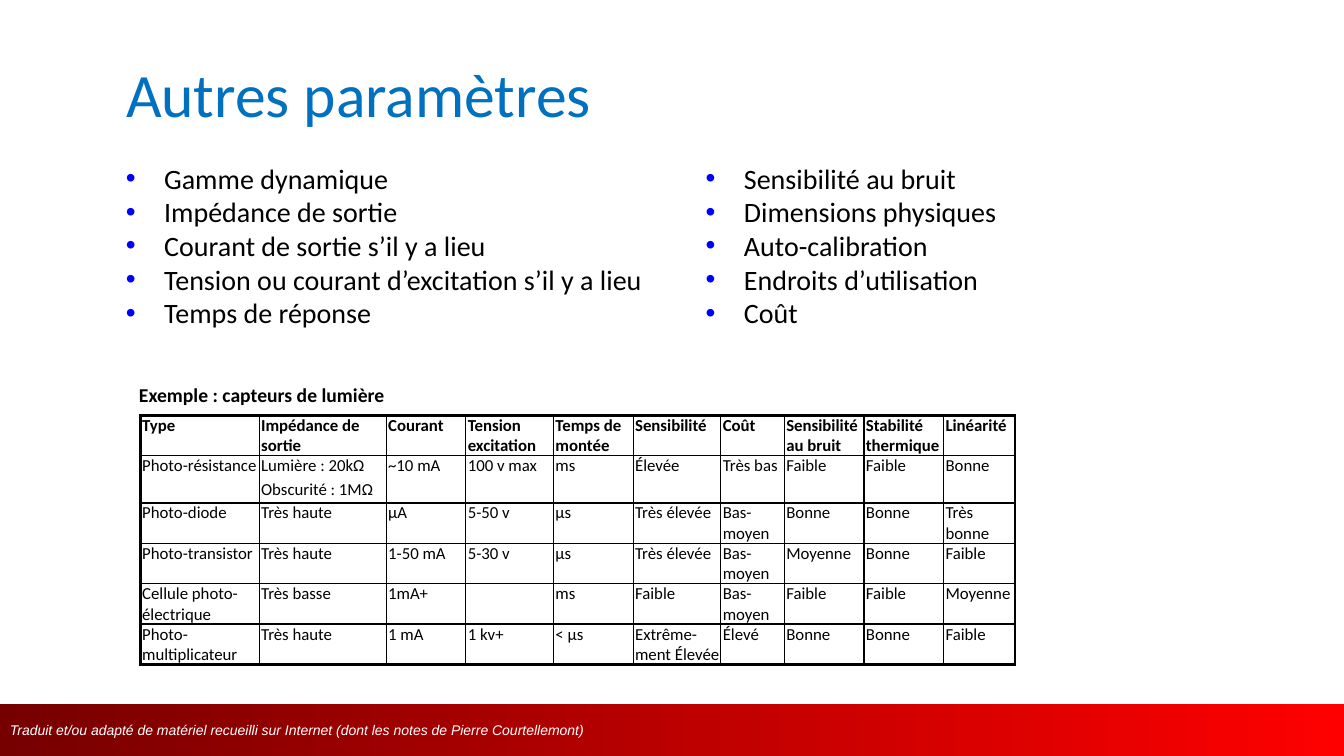
"""Build the slide on further sensor parameters, with a table of light sensors."""
from lxml.etree import SubElement
from pptx import Presentation
from pptx.dml.color import RGBColor
from pptx.enum.shapes import MSO_SHAPE as Preset
from pptx.enum.text import MSO_ANCHOR as Anchor, MSO_AUTO_SIZE as AutoSize, PP_ALIGN as Align
from pptx.oxml.ns import qn
from pptx.util import Pt

PX = 9144
BLACK = RGBColor(0x00, 0x00, 0x00)
WHITE = RGBColor(0xFF, 0xFF, 0xFF)
TITLE_BLUE = RGBColor(0x00, 0x70, 0xC0)
BULLET_BLUE = RGBColor(0x00, 0x00, 0xFF)
DARK_RED = RGBColor(0x76, 0x00, 0x00)
RED = RGBColor(0xFF, 0x00, 0x00)

TITLE = "Autres paramètres"
CREDIT = "Traduit et/ou adapté de matériel recueilli sur Internet (dont les notes de Pierre Courtellemont)"
CAPTION = "Exemple : capteurs de lumière"
PARAMETERS = [
    ((115, 155, 543, 184), [
        "Gamme dynamique",
        "Impédance de sortie",
        "Courant de sortie s’il y a lieu",
        "Tension ou courant d’excitation s’il y a lieu",
        "Temps de réponse",
    ]),
    ((690, 155, 449, 181), [
        "Sensibilité au bruit",
        "Dimensions physiques",
        "Auto-calibration",
        "Endroits d’utilisation",
        "Coût",
    ]),
]
SENSORS = [
    ("Type", "Impédance de sortie", "Courant", "Tension excitation", "Temps de montée",
     "Sensibilité", "Coût", "Sensibilité au bruit", "Stabilité thermique", "Linéarité"),
    ("Photo-résistance", "Lumière : 20kΩ\nObscurité : 1MΩ", "~10 mA", "100 v max", "ms",
     "Élevée", "Très bas", "Faible", "Faible", "Bonne"),
    ("Photo-diode", "Très haute", "μA", "5-50 v", "μs",
     "Très élevée", "Bas-moyen", "Bonne", "Bonne", "Très bonne"),
    ("Photo-transistor", "Très haute", "1-50 mA", "5-30 v", "μs",
     "Très élevée", "Bas-moyen", "Moyenne", "Bonne", "Faible"),
    ("Cellule photo-électrique", "Très basse", "1mA+", "", "ms",
     "Faible", "Bas-moyen", "Faible", "Faible", "Moyenne"),
    ("Photo-multiplicateur", "Très haute", "1 mA", "1 kv+", "< μs",
     "Extrême-ment Élevée", "Élevé", "Bonne", "Bonne", "Faible"),
]
COLUMN_WIDTHS = [118, 126, 79, 87, 79, 87, 63, 79, 79, 71]
ROW_HEIGHTS = [40, 47, 40, 40, 40, 40]


def emu(*lengths):
    return [length * PX for length in lengths]


def write(frame, lines, size, color=BLACK, font="Calibri", bold=False, italic=False, gap=0, bullet=None):
    for index, line in enumerate(lines):
        paragraph = frame.add_paragraph() if index else frame.paragraphs[0]
        paragraph.alignment = Align.LEFT
        if index and gap:
            paragraph.space_before = Pt(gap)
        if bullet:
            add_bullet(paragraph, bullet)
        if line:
            run = paragraph.add_run()
            run.text = line
            run.font.name, run.font.size = font, Pt(size)
            run.font.bold, run.font.italic = bold, italic
            run.font.color.rgb = color


def add_bullet(paragraph, color):
    properties = paragraph._p.get_or_add_pPr()
    properties.set("marL", str(38 * PX))
    properties.set("indent", str(-38 * PX))
    SubElement(SubElement(properties, qn("a:buClr")), qn("a:srgbClr"), val=str(color))
    SubElement(properties, qn("a:buFont"), typeface="Arial")
    SubElement(properties, qn("a:buChar"), char="•")


def add_border(cell, side, width):
    line = SubElement(cell._tc.get_or_add_tcPr(), qn(f"a:ln{side}"), w=str(Pt(width)))
    SubElement(SubElement(line, qn("a:solidFill")), qn("a:srgbClr"), val=str(BLACK))


def add_band(slide):
    band = slide.shapes.add_shape(Preset.RECTANGLE, *emu(0, 698, 1333, 52))
    band.shadow.inherit = False
    band.line.fill.background()
    band.fill.gradient()
    band.fill.gradient_angle = 0
    for stop, color, position in zip(band.fill.gradient_stops, (DARK_RED, RED), (0, 1)):
        stop.color.rgb, stop.position = color, position
    band.text_frame.word_wrap = True
    band.text_frame.vertical_anchor = Anchor.MIDDLE
    write(band.text_frame, [CREDIT], 10, color=WHITE, font="Arial", italic=True)


def add_title(slide):
    title = slide.shapes.title
    title.left, title.top, title.width, title.height = emu(115, 30, 1151, 125)
    title.text_frame.auto_size = AutoSize.NONE
    title.text_frame.vertical_anchor = Anchor.MIDDLE
    write(title.text_frame, [TITLE], 44, color=TITLE_BLUE)


def add_sensors(slide):
    box = emu(139, 412, sum(COLUMN_WIDTHS), sum(ROW_HEIGHTS))
    last_row, last_column = len(SENSORS) - 1, len(COLUMN_WIDTHS) - 1
    table = slide.shapes.add_table(last_row + 1, last_column + 1, *box).table
    table.first_row = table.horz_banding = False
    for column, width in zip(table.columns, COLUMN_WIDTHS):
        column.width = width * PX
    for row, height in zip(table.rows, ROW_HEIGHTS):
        row.height = height * PX
    for r, sensor in enumerate(SENSORS):
        for c, value in enumerate(sensor):
            cell = table.cell(r, c)
            cell.margin_left, cell.margin_right, cell.margin_top, cell.margin_bottom = emu(2, 0, 0, 0)
            outer = {"L": c == 0, "R": c == last_column, "T": r == 0, "B": r == last_row}
            for side, is_outer in outer.items():
                add_border(cell, side, 2.25 if is_outer else 1)
            cell.fill.background()
            write(cell.text_frame, value.split("\n"), 12, bold=r == 0, gap=2.4)


def main():
    deck = Presentation()
    deck.slide_width, deck.slide_height = emu(1333, 750)
    slide = deck.slides.add_slide(deck.slide_layouts[5])
    add_band(slide)
    add_title(slide)
    for box, names in PARAMETERS:
        parameters = slide.shapes.add_textbox(*emu(*box)).text_frame
        parameters.word_wrap = True
        write(parameters, names, 20, bullet=BULLET_BLUE)
    add_sensors(slide)
    caption = slide.shapes.add_textbox(*emu(128, 375, 265, 34)).text_frame
    write(caption, [CAPTION], 14, bold=True)
    deck.save("out.pptx")


if __name__ == "__main__":
    main()
